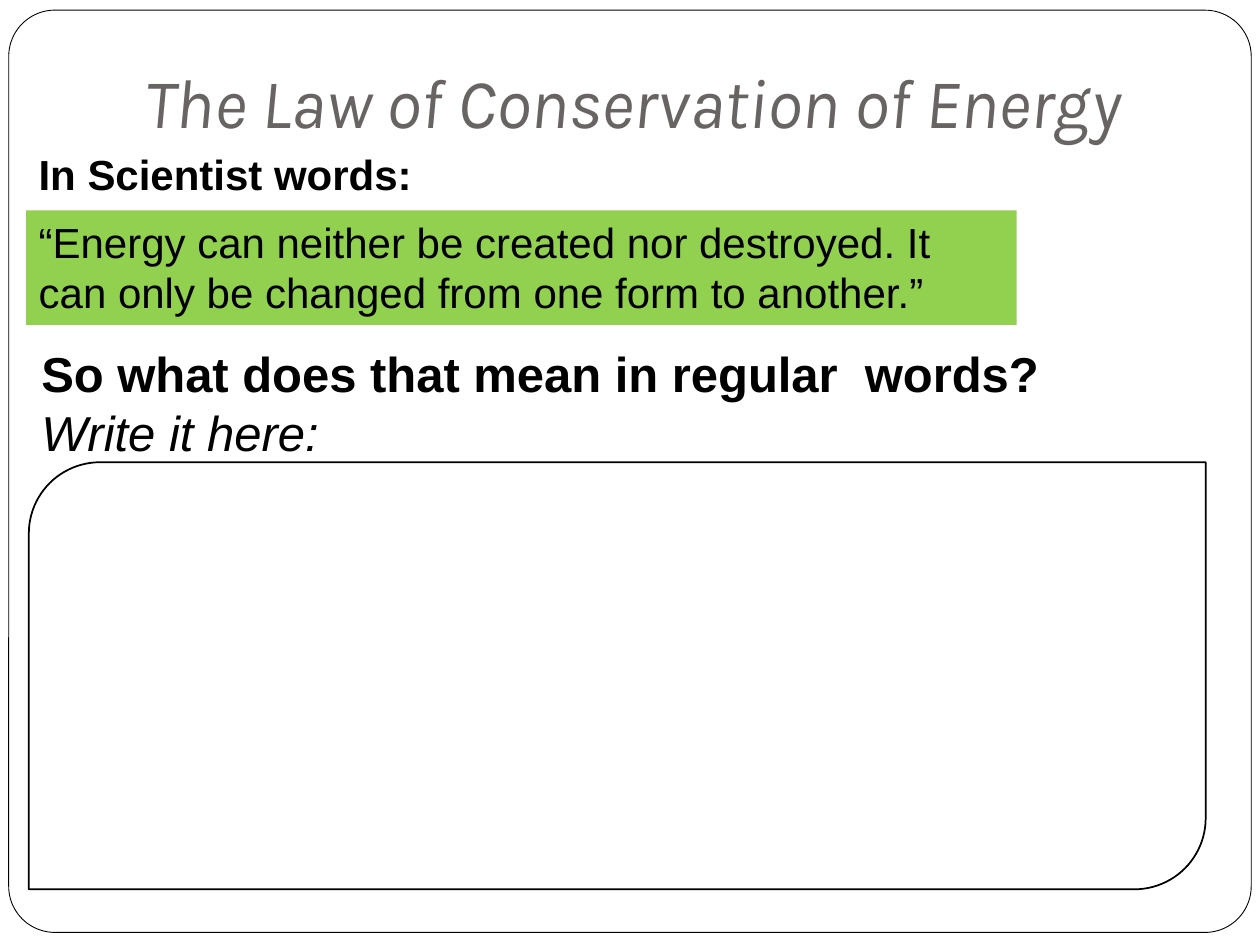
from pptx import Presentation
from pptx.dml.color import RGBColor
from pptx.enum.shapes import MSO_SHAPE
from pptx.enum.text import MSO_ANCHOR, PP_ALIGN
from pptx.util import Pt

BLACK = RGBColor(0x00, 0x00, 0x00)
WHITE = RGBColor(0xFF, 0xFF, 0xFF)
GRAY = RGBColor(0x69, 0x64, 0x64)
GREEN = RGBColor(0x92, 0xD0, 0x50)

TITLE = "The Law of Conservation of Energy "
LABEL = "In Scientist words:"
LAW = ("“Energy can neither be created nor destroyed. "
       "It can only be changed from one form to another.”")
QUESTION = "So what does that mean in regular  words?"
PROMPT = "Write it here:"

FRAME_BOX = (5, 5.8, 710, 527)
TITLE_BOX = (59.8, 26, 612, 62.6)
LABEL_BOX = (15, 81.4, 345.6, 36)
LAW_BOX = (15, 120.2, 566, 65.5)
QUESTION_BOX = (16.5, 193, 644.4, 244.8)
ANSWER_BOX = (16.5, 264.2, 672.5, 244)


def add_panel(s, kind, box, fill, line_width=0):
    sp = s.shapes.add_shape(kind, *map(Pt, box))
    sp.shadow.inherit = False
    sp.fill.solid()
    sp.fill.fore_color.rgb = fill
    if line_width:
        sp.line.color.rgb = BLACK
        sp.line.width = Pt(line_width)
    else:
        sp.line.fill.background()
    return sp


def write(p, text, size=24, font="Arial", color=BLACK, bold=False,
          italic=False, align=PP_ALIGN.LEFT):
    p.alignment = align
    r = p.add_run()
    r.text = text
    r.font.name = font
    r.font.size = Pt(size)
    r.font.color.rgb = color
    r.font.bold = bold
    r.font.italic = italic


def add_text_box(s, box):
    tf = s.shapes.add_textbox(*map(Pt, box)).text_frame
    tf.word_wrap = True
    return tf


prs = Presentation()
prs.slide_width, prs.slide_height = Pt(720), Pt(540)
s = prs.slides.add_slide(prs.slide_layouts[5])

title = s.shapes.title
frame = add_panel(s, MSO_SHAPE.ROUNDED_RECTANGLE, FRAME_BOX, WHITE, 0.5)
frame.adjustments[0] = 0.05
title.element.addprevious(frame.element)

title.left, title.top, title.width, title.height = map(Pt, TITLE_BOX)
tf = title.text_frame
tf.vertical_anchor = MSO_ANCHOR.BOTTOM
tf.margin_bottom = Pt(7.2)
write(tf.paragraphs[0], TITLE, size=40, font="Karla", color=GRAY,
      italic=True, align=PP_ALIGN.CENTER)

law = add_panel(s, MSO_SHAPE.RECTANGLE, LAW_BOX, GREEN)
law.text_frame.vertical_anchor = MSO_ANCHOR.TOP
write(law.text_frame.paragraphs[0], LAW)

tf = add_text_box(s, LABEL_BOX)
write(tf.paragraphs[0], LABEL, bold=True)

tf = add_text_box(s, QUESTION_BOX)
write(tf.paragraphs[0], QUESTION, size=28, bold=True)
write(tf.add_paragraph(), PROMPT, size=28, italic=True)

add_panel(s, MSO_SHAPE.ROUND_2_DIAG_RECTANGLE, ANSWER_BOX, WHITE, 1)

prs.save("out.pptx")
